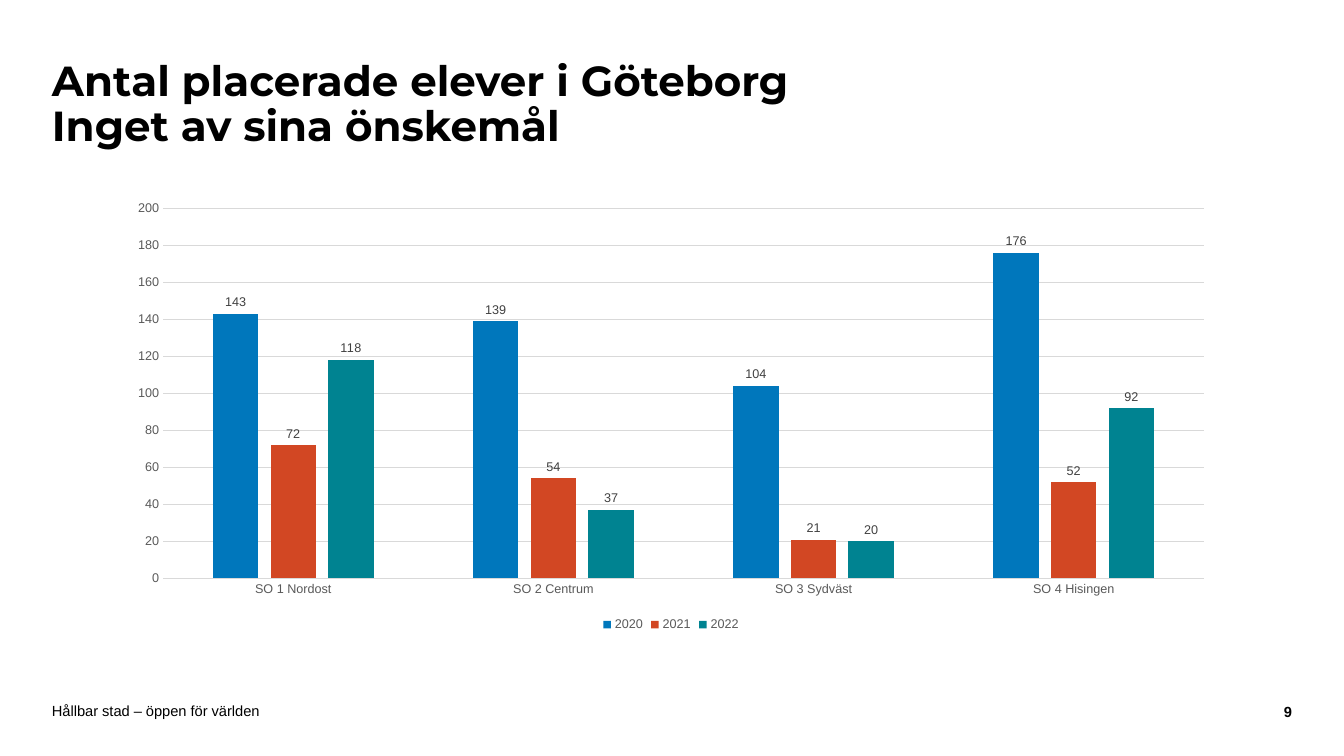
from pptx import Presentation
from pptx import util as u
from pptx.chart.data import CategoryChartData
from pptx.dml.color import RGBColor
from pptx.enum import chart as ch
from pptx.enum import text as t

BLACK = RGBColor(0x00, 0x00, 0x00)
DARK_GREY = RGBColor(0x40, 0x40, 0x40)
GREY = RGBColor(0x59, 0x59, 0x59)
LIGHT_GREY = RGBColor(0xD9, 0xD9, 0xD9)
BLUE = RGBColor(0x00, 0x77, 0xBC)
RED = RGBColor(0xD2, 0x47, 0x23)
TEAL = RGBColor(0x00, 0x83, 0x91)

# Content
AREAS = ["SO 1 Nordost", "SO 2 Centrum", "SO 3 Sydväst", "SO 4 Hisingen"]
YEARS = [
    ("2020", BLUE, (143, 139, 104, 176)),
    ("2021", RED, (72, 54, 21, 52)),
    ("2022", TEAL, (118, 37, 20, 92)),
]
LEFT, RIGHT = t.PP_ALIGN.LEFT, t.PP_ALIGN.RIGHT
# lines, box in px, alignment, line spacing, font
TEXTS = [
    (["Antal placerade elever i Göteborg", "Inget av sina önskemål"],
     (52, 42, 1011, 127), LEFT, 0.9,
     {"name": "Montserrat", "size": u.Pt(30), "bold": True}),
    (["Hållbar stad – öppen för världen"],
     (52, 703, 953, 16), LEFT, 1.0,
     {"name": "Arial", "size": u.Pt(10.5), "bold": False}),
    (["9"],
     (1227, 704, 65, 16), RIGHT, 1.0,
     {"name": "Arial", "size": u.Pt(10.5), "bold": True}),
]
CHART_BOX = (116, 192, 1110, 444)
SLIDE_SIZE = (1344, 756)
EMU_PER_PX = 914400 / 100.8


def px(*lengths):
    return [u.Emu(round(length * EMU_PER_PX)) for length in lengths]


def set_font(font, color, values):
    for name, value in values.items():
        setattr(font, name, value)
    font.color.rgb = color


def add_text(slide, lines, box, alignment, spacing, values):
    frame = slide.shapes.add_textbox(*px(*box)).text_frame
    settings = {"word_wrap": True, "vertical_anchor": t.MSO_ANCHOR.MIDDLE,
                "margin_left": 0, "margin_right": 0,
                "margin_top": 0, "margin_bottom": 0}
    for name, value in settings.items():
        setattr(frame, name, value)
    paragraph = frame.paragraphs[0]
    paragraph.alignment = alignment
    paragraph.line_spacing = spacing
    for index, line in enumerate(lines):
        if index:
            paragraph.add_line_break()
        run = paragraph.add_run()
        run.text = line
        set_font(run.font, BLACK, values)


def add_pupil_chart(slide):
    data = CategoryChartData()
    data.categories = AREAS
    for year, _, values in YEARS:
        data.add_series(year, values)
    chart = slide.shapes.add_chart(
        ch.XL_CHART_TYPE.COLUMN_CLUSTERED, *px(*CHART_BOX), data).chart
    small = {"name": "Arial", "size": u.Pt(9), "bold": False}
    set_font(chart.font, BLACK, {"name": "Arial", "size": u.Pt(10)})
    chart.has_title = False

    # Legend
    chart.has_legend = True
    chart.legend.position = ch.XL_LEGEND_POSITION.BOTTOM
    chart.legend.include_in_layout = False
    set_font(chart.legend.font, GREY, small)

    # Axes
    for axis in (chart.category_axis, chart.value_axis):
        axis.major_tick_mark = axis.minor_tick_mark = ch.XL_TICK_MARK.NONE
        set_font(axis.tick_labels.font, GREY, small)
    value_axis = chart.value_axis
    for name, value in {"minimum_scale": 0, "maximum_scale": 200,
                        "major_unit": 20, "has_major_gridlines": True}.items():
        setattr(value_axis, name, value)
    value_axis.format.line.fill.background()
    for line in (chart.category_axis.format.line,
                 value_axis.major_gridlines.format.line):
        line.color.rgb = LIGHT_GREY
        line.width = u.Pt(0.75)

    # Columns and their labels
    plot = chart.plots[0]
    for name, value in {"gap_width": 219, "overlap": -27,
                        "vary_by_categories": False}.items():
        setattr(plot, name, value)
    for series, (_, color, _) in zip(plot.series, YEARS):
        series.format.fill.solid()
        series.format.fill.fore_color.rgb = color
        labels = series.data_labels
        labels.show_value = True
        labels.position = ch.XL_LABEL_POSITION.OUTSIDE_END
        set_font(labels.font, DARK_GREY, small)


def main():
    presentation = Presentation()
    presentation.slide_width, presentation.slide_height = px(*SLIDE_SIZE)
    slide = presentation.slides.add_slide(presentation.slide_layouts[6])
    for entry in TEXTS:
        add_text(slide, *entry)
    add_pupil_chart(slide)
    presentation.save("out.pptx")


if __name__ == "__main__":
    main()
